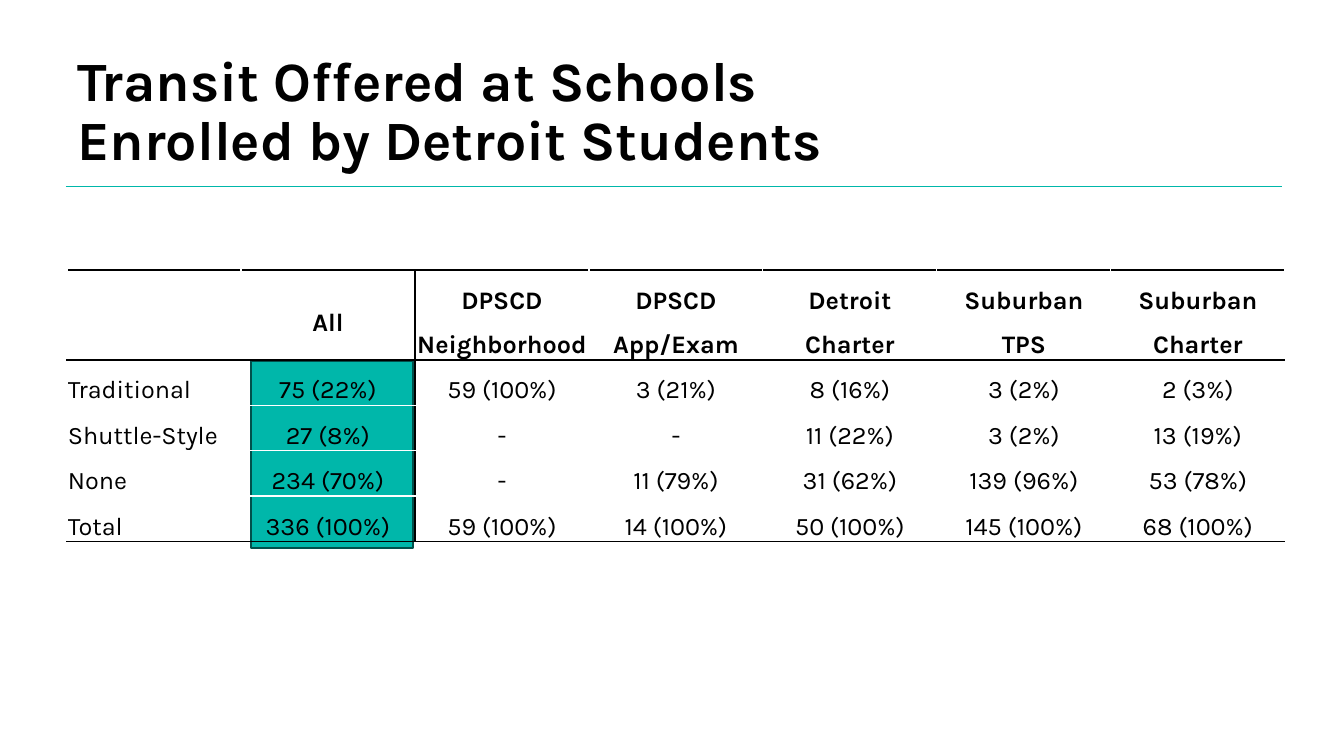
from lxml import etree
from pptx import Presentation
from pptx.dml.color import RGBColor
from pptx.enum.shapes import MSO_CONNECTOR as Connector, MSO_SHAPE as Shape
from pptx.enum.text import MSO_ANCHOR as Anchor, MSO_AUTO_SIZE as AutoSize, PP_ALIGN as Align
from pptx.oxml.ns import qn
from pptx.util import Emu, Pt

COLORS = {"black": "000000", "white": "FFFFFF", "teal": "00B7AA", "edge": "00504B"}
FONT = "Karla"
EMU_PER_PX = 914400 / 100.8
COLUMN_WIDTH = 174
HEADER_HEIGHT = 90
ROW_HEIGHT = 45
ROWS = [
    ["", "All", "DPSCD Neighborhood", "DPSCD App/Exam", "Detroit\nCharter",
     "Suburban\nTPS", "Suburban Charter"],
    ["Traditional", "75 (22%)", "59 (100%)", "3 (21%)", "8 (16%)", "3 (2%)", "2 (3%)"],
    ["Shuttle-Style", "27 (8%)", "-", "-", "11 (22%)", "3 (2%)", "13 (19%)"],
    ["None", "234 (70%)", "-", "11 (79%)", "31 (62%)", "139 (96%)", "53 (78%)"],
    ["Total", "336 (100%)", "59 (100%)", "14 (100%)", "50 (100%)", "145 (100%)", "68 (100%)"],
]


def px(length):
    return Emu(round(length * EMU_PER_PX))


def color(name):
    return RGBColor.from_string(COLORS[name])


def format_text(frame, size, bold, align, spacing):
    for para in frame.paragraphs:
        para.alignment = align
        para.line_spacing = spacing
        for span in para.runs:
            span.font.name = FONT
            span.font.size = Pt(size)
            span.font.bold = bold
            span.font.color.rgb = color("black")


def add_title(page, text):
    title = page.shapes.title
    title.left, title.top, title.width, title.height = px(67), px(40), px(786), px(146)
    frame = title.text_frame
    frame.text = text
    frame.word_wrap = True
    frame.auto_size = AutoSize.NONE
    frame.vertical_anchor = Anchor.MIDDLE
    format_text(frame, 39.6, True, Align.LEFT, 0.9)


def add_rule(page, left, right, y):
    rule = page.shapes.add_connector(Connector.STRAIGHT, px(left), px(y), px(right), px(y))
    rule.line.color.rgb = color("teal")
    rule.line.width = Pt(0.5)
    etree.SubElement(rule._element.spPr, qn("a:effectLst"))


def add_highlight(page, left, top, width, height):
    box = page.shapes.add_shape(Shape.RECTANGLE, px(left), px(top), px(width), px(height))
    box.shadow.inherit = False
    box.fill.solid()
    box.fill.fore_color.rgb = color("teal")
    box.line.color.rgb = color("edge")
    box.line.width = Pt(1)


def set_borders(cell, black_sides):
    properties = cell._tc.get_or_add_tcPr()
    for index, side in enumerate("LRTB"):
        line = etree.Element(qn(f"a:ln{side}"), w=str(Pt(1)))
        fill = etree.SubElement(line, qn("a:solidFill"))
        name = "black" if side in black_sides else "white"
        etree.SubElement(fill, qn("a:srgbClr"), val=COLORS[name])
        properties.insert(index, line)


def black_sides(row, column):
    rules = {
        "T": row in (0, 1),
        "B": row in (0, len(ROWS) - 1),
        "R": column == 1,
        "L": column == 2,
    }
    return {side for side, is_black in rules.items() if is_black}


def fill_cell(cell, text, row, column):
    is_label = column == 0
    cell.fill.background()
    cell.margin_left = cell.margin_right = cell.margin_top = px(1)
    cell.margin_bottom = 0
    cell.vertical_anchor = Anchor.BOTTOM if is_label else Anchor.MIDDLE
    cell.text_frame.text = text
    format_text(cell.text_frame, 18, row == 0, Align.LEFT if is_label else Align.CENTER, 1.5)
    set_borders(cell, black_sides(row, column))


def add_transit_table(page, left, top):
    width = COLUMN_WIDTH * len(ROWS[0])
    height = HEADER_HEIGHT + ROW_HEIGHT * (len(ROWS) - 1)
    table = page.shapes.add_table(
        len(ROWS), len(ROWS[0]), px(left), px(top), px(width), px(height)).table
    table.first_row = table.horz_banding = False
    for column in table.columns:
        column.width = px(COLUMN_WIDTH)
    for row, texts in enumerate(ROWS):
        table.rows[row].height = px(ROW_HEIGHT if row else HEADER_HEIGHT)
        for column, text in enumerate(texts):
            fill_cell(table.cell(row, column), text, row, column)


def main():
    deck = Presentation()
    deck.slide_width, deck.slide_height = px(1344), px(756)
    page = deck.slides.add_slide(deck.slide_layouts[5])
    add_rule(page, 66, 1282, 186)
    add_title(page, "Transit Offered at Schools Enrolled by Detroit Students")
    add_highlight(page, 251, 361, 162, 187)
    add_transit_table(page, 67, 270)
    deck.save("out.pptx")


if __name__ == "__main__":
    main()
